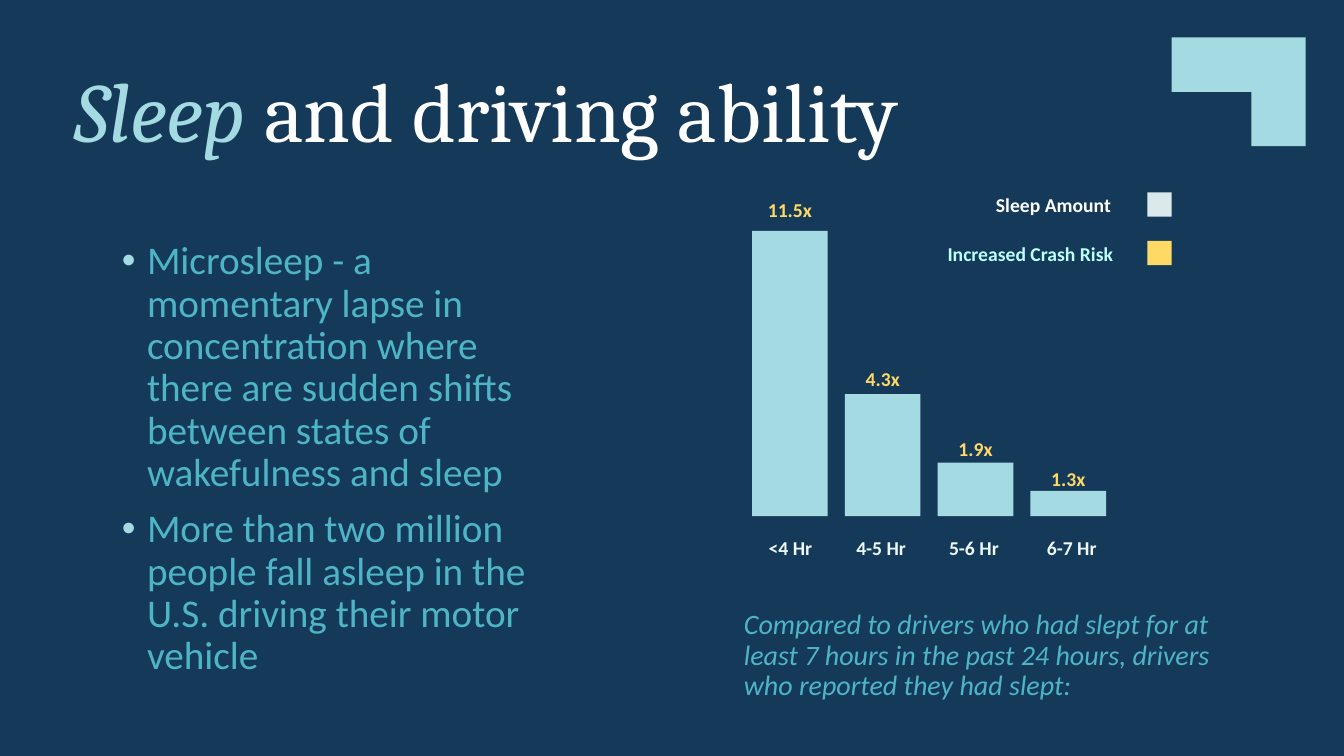
"""Builds a slide on sleep and driving ability with a bar graphic of crash risk."""
from dataclasses import dataclass

from lxml import etree
from pptx import Presentation
from pptx import util as u
from pptx.dml import color
from pptx.enum import shapes, text
from pptx.oxml import ns

COLORS = {
    "navy": "153959", "aqua": "A4DBE2", "teal": "4EB5C4", "white": "FFFFFF",
    "yellow": "FFD966", "mist": "DCE9EC", "ice": "EDF8F9", "cyan": "BDFFFD",
}
BAR_LEFT, BAR_PITCH, BAR_WIDTH, BASELINE = 7.46, 0.92, 0.75, 5.12
LABEL_HEIGHT, HOURS_TOP, HOURS_WIDTH = 0.34, 5.26, 0.96
SWATCH_LEFT, SWATCH_SIZE = 11.38, 0.24


@dataclass(frozen=True)
class Box:
    left: float
    top: float
    width: float
    height: float

    def lengths(self) -> list:
        return [u.Inches(side) for side in (self.left, self.top, self.width, self.height)]


@dataclass(frozen=True)
class Bar:
    hours: str
    risk: str
    height: float
    risk_middle: float
    hours_center: float


@dataclass(frozen=True)
class LegendEntry:
    label: str
    label_box: Box
    label_color: str
    swatch_top: float
    swatch_color: str
    align: text.PP_ALIGN


BARS = [
    Bar("<4 Hr", "11.5x", 2.83, 2.08, 7.84),
    Bar("4-5 Hr", "4.3x", 1.21, 3.76, 8.74),
    Bar("5-6 Hr", "1.9x", 0.53, 4.45, 9.66),
    Bar("6-7 Hr", "1.3x", 0.25, 4.75, 10.63),
]
LEGEND = [
    LegendEntry("Sleep Amount", Box(9.78, 1.91, 1.6, 0.24), "white", 1.91, "mist",
                text.PP_ALIGN.LEFT),
    LegendEntry("Increased Crash Risk", Box(9.14, 2.2, 2.16, 0.63), "cyan", 2.39, "yellow",
                text.PP_ALIGN.CENTER),
]
FACTS = [
    "Microsleep - a momentary lapse in concentration where there are sudden shifts "
    "between states of wakefulness and sleep",
    "More than two million people fall asleep in the U.S. driving their motor vehicle",
]
CAPTION = ("Compared to drivers who had slept for at least 7 hours in the past 24 hours, "
           "drivers who reported they had slept:")


def rgb(name: str) -> color.RGBColor:
    return color.RGBColor.from_string(COLORS[name])


def format_run(run, size: float, color_name: str, font: str = "Calibri",
               bold: bool = False, italic: bool = False) -> None:
    run.font.size = u.Pt(size)
    run.font.name = font
    run.font.bold = bold
    run.font.italic = italic
    run.font.color.rgb = rgb(color_name)


def add_block(slide, box: Box, kind: int = shapes.MSO_SHAPE.RECTANGLE,
              color_name: str = "aqua"):
    shape = slide.shapes.add_shape(kind, *box.lengths())
    shape.shadow.inherit = False
    shape.fill.solid()
    shape.fill.fore_color.rgb = rgb(color_name)
    shape.line.fill.background()
    return shape


def add_text(slide, box: Box, content: str):
    frame = slide.shapes.add_textbox(*box.lengths()).text_frame
    frame.word_wrap = True
    frame.text = content
    return frame


def add_label(slide, box: Box, content: str, color_name: str,
              align: text.PP_ALIGN = text.PP_ALIGN.CENTER) -> None:
    frame = add_text(slide, box, content)
    frame.vertical_anchor = text.MSO_ANCHOR.MIDDLE
    frame.margin_left = frame.margin_right = u.Inches(0.1)
    frame.margin_top = frame.margin_bottom = u.Inches(0.1)
    paragraph = frame.paragraphs[0]
    paragraph.alignment = align
    format_run(paragraph.runs[0], 14, color_name, bold=True)


def add_bullet(paragraph) -> None:
    properties = paragraph._p.get_or_add_pPr()
    properties.set("marL", str(u.Inches(0.25)))
    properties.set("indent", str(u.Inches(-0.25)))
    bullet_color = etree.SubElement(properties, ns.qn("a:buClr"))
    etree.SubElement(bullet_color, ns.qn("a:srgbClr"), val=COLORS["aqua"])
    etree.SubElement(properties, ns.qn("a:buFont"), typeface="Arial")
    etree.SubElement(properties, ns.qn("a:buChar"), char="•")


def add_title(slide) -> None:
    paragraph = add_text(slide, Box(0.64, 0.53, 10.18, 1.11), "Sleep ").paragraphs[0]
    paragraph.add_run().text = "and driving ability"
    emphasis, rest = paragraph.runs
    format_run(emphasis, 60, "aqua", "Cambria", italic=True)
    format_run(rest, 60, "white", "Cambria")


def add_facts(slide) -> None:
    frame = add_text(slide, Box(1.11, 2.34, 4.55, 5.55), "\n".join(FACTS))
    for index, paragraph in enumerate(frame.paragraphs):
        add_bullet(paragraph)
        paragraph.line_spacing = 0.9
        if index:
            paragraph.space_before = u.Pt(10)
        format_run(paragraph.runs[0], 28, "teal")


def add_bar(slide, index: int, bar: Bar) -> None:
    left = BAR_LEFT + index * BAR_PITCH
    add_block(slide, Box(left, BASELINE - bar.height, BAR_WIDTH, bar.height))
    add_label(slide, Box(left, bar.risk_middle - LABEL_HEIGHT / 2, BAR_WIDTH, LABEL_HEIGHT),
              bar.risk, "yellow")
    add_label(slide, Box(bar.hours_center - HOURS_WIDTH / 2, HOURS_TOP,
                         HOURS_WIDTH, LABEL_HEIGHT), bar.hours, "ice")


def add_legend_entry(slide, entry: LegendEntry) -> None:
    add_label(slide, entry.label_box, entry.label, entry.label_color, entry.align)
    add_block(slide, Box(SWATCH_LEFT, entry.swatch_top, SWATCH_SIZE, SWATCH_SIZE),
              color_name=entry.swatch_color)


def add_caption(slide) -> None:
    paragraph = add_text(slide, Box(7.28, 6.01, 4.94, 1.01), CAPTION).paragraphs[0]
    paragraph.line_spacing = 0.9
    format_run(paragraph.runs[0], 20, "teal", italic=True)


def main() -> None:
    presentation = Presentation()
    presentation.slide_width = u.Inches(13.33)
    presentation.slide_height = u.Inches(7.5)
    slide = presentation.slides.add_slide(presentation.slide_layouts[6])
    slide.background.fill.solid()
    slide.background.fill.fore_color.rgb = rgb("navy")
    corner = add_block(slide, Box(11.62, 0.37, 1.33, 1.08), shapes.MSO_SHAPE.CORNER)
    corner.rotation = 180
    add_facts(slide)
    add_title(slide)
    for index, bar in enumerate(BARS):
        add_bar(slide, index, bar)
    for entry in LEGEND:
        add_legend_entry(slide, entry)
    add_caption(slide)
    presentation.save("out.pptx")


if __name__ == "__main__":
    main()
